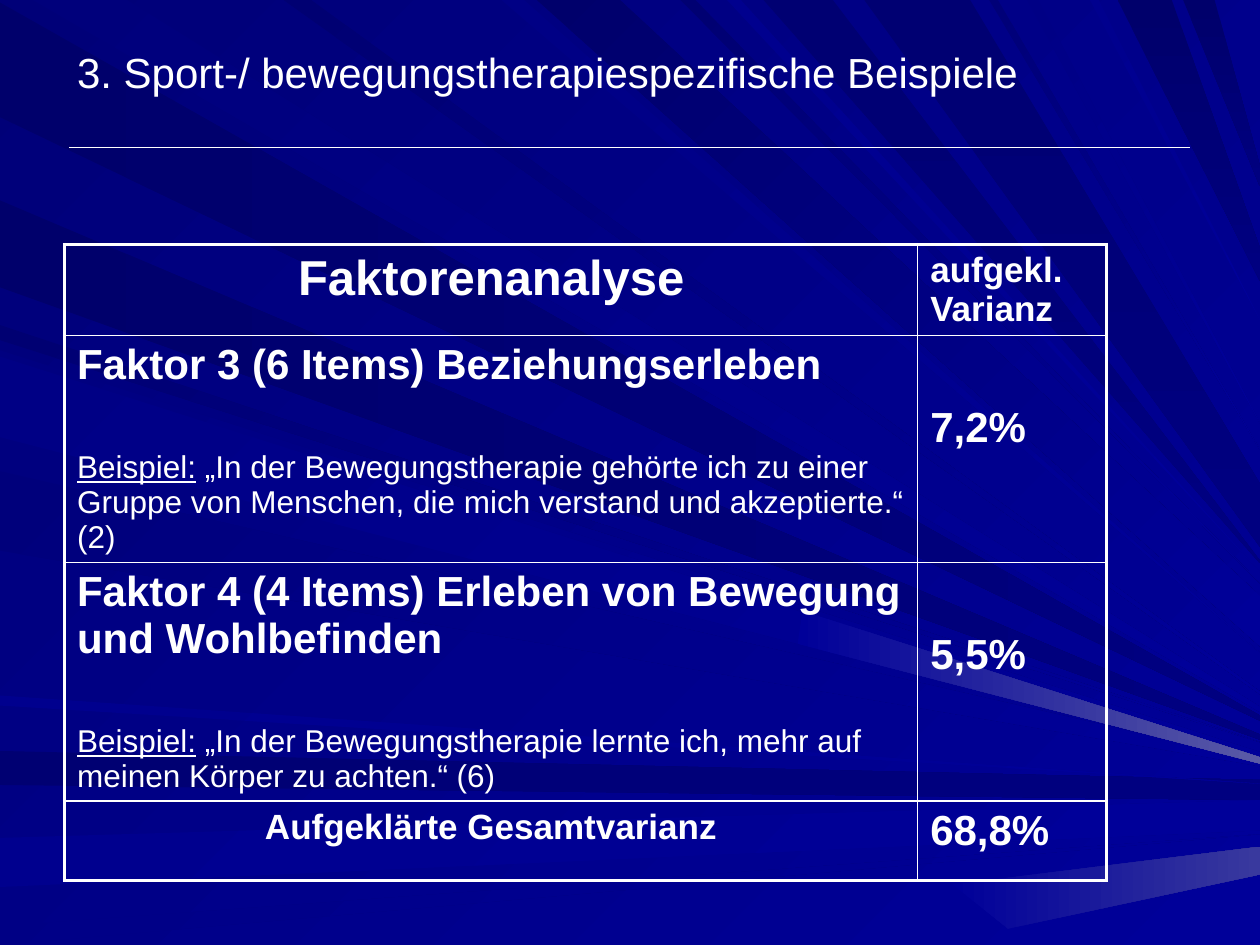
from lxml import etree
from pptx import Presentation
from pptx import util as u
from pptx.dml.color import RGBColor
from pptx.enum import shapes, text
from pptx.oxml import ns

FONT = "Arial"
COLOURS = {
    "white": "FFFFFF", "glow": "5A5AA6", "faint": "39399E",
    "darkest": "00006B", "darker": "000072", "dark": "00007B", "navy": "000080",
    "middle": "000085", "light": "00008E", "royal": "000099", "page": "000078",
}
HUNDREDTH_INCH = u.Cm(0.0254)
RIGHT_EDGE = 1000
TAPER = {"point": 0.05, "broad": 0.6}

RAYS = [
    ("left", "point", "darkest", "navy", 2, 93, 570),
    ("top", "point", "dark", "royal", 26, 101, 563),
    ("left", "broad", "darker", "navy", 596, 623, 627),
    ("left", "broad", "light", "royal", 665, 704, 647),
    ("left", "point", "middle", "royal", 735, 750, 662),
    ("left", "point", "darker", "royal", 258, 270, 589),
    ("left", "point", "darkest", "navy", 159, 228, 585),
    ("top", "point", "middle", "royal", 398, 416, 518),
    ("top", "broad", "darkest", "royal", 426, 492, 493),
    ("top", "point", "darker", "royal", 540, 552, 463),
    ("top", "point", "darker", "navy", 606, 661, 446),
    ("top", "broad", "darkest", "navy", 887, 930, 210),
    ("top", "broad", "darkest", "navy", 939, 964, 140),
    ("left", "point", "navy", "royal", 278, 342, 599),
    ("left", "point", "dark", "royal", 374, 437, 606),
    ("left", "point", "light", "royal", 552, 560, 622),
    ("top", "point", "darker", "royal", 225, 247, 550),
    ("top", "point", "light", "royal", 577, 588, 454),
    ("top", "broad", "darker", "navy", 686, 770, 409),
    ("top", "point", "page", "royal", 785, 792, 357),
    ("top", "point", "middle", "royal", 815, 824, 336),
    ("top", "point", "light", "royal", 865, 872, 254),
    ("left", "point", "middle", "royal", 283, 347, 604),
]
GLOWS = [
    ("glow", [(637, 485), (RIGHT_EDGE, 601), (RIGHT_EDGE, 606), (633, 511)]),
    ("faint", [(756, 702), (RIGHT_EDGE, 672), (RIGHT_EDGE, 694), (800, 737)]),
]


def paint(fill, first, last, angle):
    fill.gradient()
    fill.gradient_angle = -angle % 360
    for stop, name, position in zip(fill.gradient_stops, (first, last), (0, 1)):
        stop.color.rgb = RGBColor.from_string(COLOURS[name])
        stop.position = position


def add_span(para, words, size, bold=False, underline=False):
    span = para.add_run()
    span.text = words
    span.font.name = FONT
    span.font.size = u.Pt(size)
    span.font.bold = bold
    span.font.underline = underline
    span.font.color.rgb = RGBColor.from_string(COLOURS["white"])


deck = Presentation()
deck.slide_width, deck.slide_height = u.Cm(25.4), u.Cm(19.05)
page = deck.slides.add_slide(deck.slide_layouts[5])
paint(page.background.fill, "page", "royal", 45)

beams = []
for side, end, first, last, start, stop, tip in RAYS:
    half = round((stop - start) * TAPER[end] / 2)
    upper, lower = (RIGHT_EDGE, tip - half), (RIGHT_EDGE, tip + half)
    if side == "left":
        points, angle = [(0, start), upper, lower, (0, stop)], 0
    else:
        points, angle = [(stop, 0), upper, lower, (start, 0)], 90
    beams.append((first, last, 45 if last == "royal" else angle, points))
beams += [("royal", shade, 0, points) for shade, points in GLOWS]

for first, last, angle, points in beams:
    builder = page.shapes.build_freeform(*points[0], scale=HUNDREDTH_INCH)
    builder.add_line_segments(points[1:], close=True)
    ray = builder.convert_to_shape()
    ray.shadow.inherit = False
    ray.line.fill.background()
    paint(ray.fill, first, last, angle)

rule = page.shapes.add_connector(
    shapes.MSO_CONNECTOR.STRAIGHT, u.Cm(1.4), u.Cm(2.97), u.Cm(23.98), u.Cm(2.97))
rule.line.color.rgb = RGBColor.from_string(COLOURS["white"])
rule.line.width = u.Pt(0.5)
etree.SubElement(rule.element.spPr, ns.qn("a:effectLst"))

title = page.shapes.title
title.element.getparent().append(title.element)
title.left, title.top = u.Cm(1.3), u.Cm(0.71)
title.width, title.height = u.Cm(21.6), u.Cm(2.8)
box = title.text_frame
box.word_wrap = True
box.auto_size = text.MSO_AUTO_SIZE.NONE
box.vertical_anchor = text.MSO_ANCHOR.TOP
box.margin_top = u.Cm(0.23)
box.paragraphs[0].alignment = text.PP_ALIGN.LEFT
add_span(box.paragraphs[0], "3. Sport-/ bewegungstherapiespezifische Beispiele", 24)

ROWS = [
    (1.82, "Faktorenanalyse", 28, None, "aufgekl. Varianz", 20),
    (4.58, "Faktor 3 (6 Items) Beziehungserleben", 24,
     " „In der Bewegungstherapie gehörte ich zu einer Gruppe von Menschen, "
     "die mich verstand und akzeptierte.“ (2)", "7,2%", 24),
    (4.81, "Faktor 4 (4 Items) Erleben von Bewegung und Wohlbefinden", 24,
     " „In der Bewegungstherapie lernte ich, mehr auf meinen Körper zu achten.“ (6)",
     "5,5%", 24),
    (1.6, "Aufgeklärte Gesamtvarianz", 20, None, "68,8%", 24),
]
frame = page.shapes.add_table(
    len(ROWS), 2, u.Cm(1.3), u.Cm(4.93), u.Cm(21), u.Cm(sum(row[0] for row in ROWS)))
table = frame.table
table.first_row = table.horz_banding = False
table.columns[0].width, table.columns[1].width = u.Cm(17.2), u.Cm(3.8)

for index, (height, heading, size, example, share, share_size) in enumerate(ROWS):
    table.rows[index].height = u.Cm(height)
    left, right = table.cell(index, 0), table.cell(index, 1)
    para = left.text_frame.paragraphs[0]
    add_span(para, heading, size, bold=True)
    add_span(right.text_frame.paragraphs[0], share, share_size, bold=True)
    if example:
        para = left.text_frame.add_paragraph()
        para.space_before = u.Pt(35)
        add_span(para, "Beispiel:", 18, underline=True)
        add_span(para, example, 18)
        right.margin_top = u.Cm(1.4)
    else:
        para.alignment = text.PP_ALIGN.CENTER

    for column, cell in enumerate((left, right)):
        cell.fill.background()
        properties = cell._tc.get_or_add_tcPr()
        outer = {"L": column == 0, "R": column == 1,
                 "T": index == 0, "B": index == len(ROWS) - 1}
        for place, (side, is_outer) in enumerate(outer.items()):
            edge = etree.Element(ns.qn(f"a:ln{side}"), w=str(u.Pt(2.25 if is_outer else 1)))
            solid = etree.SubElement(edge, ns.qn("a:solidFill"))
            etree.SubElement(solid, ns.qn("a:srgbClr"), val=COLOURS["white"])
            properties.insert(place, edge)

deck.save("out.pptx")
